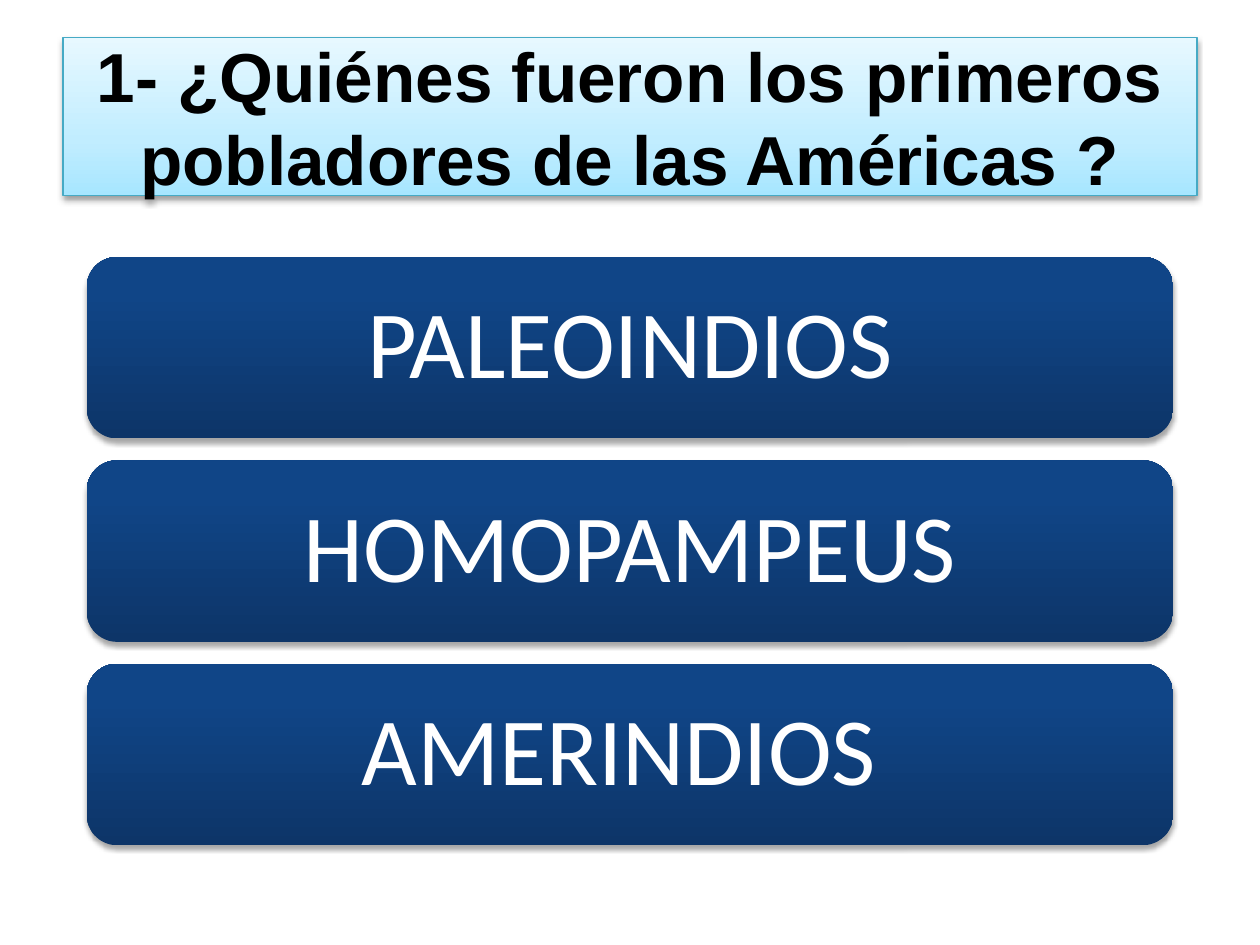
from lxml import etree
from pptx import Presentation
from pptx import util as u
from pptx.dml.color import RGBColor
from pptx.enum import shapes, text
from pptx.oxml import ns

COLORS = {
    "title_text": "000000",
    "title_border": "46AAC5",
    "answer_text": "FFFFFF",
    "shadow": "000000",
}
TITLE_GRADIENT = [(0, "A7E6FF"), (35, "C1EDFF"), (100, "E7F8FF")]
ANSWER_GRADIENT = [(0, "0D3568"), (80, "104587"), (100, "0E458A")]
ANSWERS = ["PALEOINDIOS", "HOMOPAMPEUS", "AMERINDIOS "]
ANSWER_TOP, ANSWER_PITCH = 5.18, 4.1


def child(parent, tag, **attributes):
    element = etree.SubElement(parent, ns.qn(tag))
    for name, value in attributes.items():
        element.set(name, str(value))
    return element


def fill_gradient(panel, stops):
    panel.fill.gradient()
    panel.fill.gradient_angle = 90
    stop_list = panel._element.spPr.find(".//" + ns.qn("a:gsLst"))
    for old_stop in list(stop_list):
        stop_list.remove(old_stop)
    for percent, color in stops:
        child(child(stop_list, "a:gs", pos=percent * 1000), "a:srgbClr", val=color)


def cast_shadow(panel, opacity, distance):
    panel.shadow.inherit = False
    effects = panel._element.spPr.find(ns.qn("a:effectLst"))
    shadow = child(effects, "a:outerShdw", blurRad=u.Pt(3.1), dist=u.Pt(distance),
                   dir=90 * 60000, rotWithShape=0)
    color = child(shadow, "a:srgbClr", val=COLORS["shadow"])
    child(color, "a:alpha", val=opacity * 1000)


def write_centered(panel, words, font, size, color, bold=False):
    frame = panel.text_frame
    frame.word_wrap = True
    frame.vertical_anchor = text.MSO_ANCHOR.MIDDLE
    paragraph = frame.paragraphs[0]
    paragraph.alignment = text.PP_ALIGN.CENTER
    run = paragraph.add_run()
    run.text = words
    run.font.name = font
    run.font.size = u.Pt(size)
    run.font.bold = bold
    run.font.color.rgb = RGBColor.from_string(color)
    return frame


def add_question(slide, words):
    banner = slide.shapes.add_shape(shapes.MSO_SHAPE.RECTANGLE, u.Cm(1.27), u.Cm(0.76),
                                    u.Cm(22.86), u.Cm(3.18))
    fill_gradient(banner, TITLE_GRADIENT)
    banner.line.color.rgb = RGBColor.from_string(COLORS["title_border"])
    banner.line.width = u.Pt(0.75)
    cast_shadow(banner, 38, 1.6)
    write_centered(banner, words, "Arial", 39.6, COLORS["title_text"], bold=True)


def add_answer(slide, words, top):
    bar = slide.shapes.add_shape(shapes.MSO_SHAPE.ROUNDED_RECTANGLE, u.Cm(1.75), u.Cm(top),
                                 u.Cm(21.9), u.Cm(3.66))
    fill_gradient(bar, ANSWER_GRADIENT)
    bar.line.fill.background()
    cast_shadow(bar, 35, 1.8)
    frame = write_centered(bar, words, "Calibri", 55, COLORS["answer_text"])
    frame.margin_left = frame.margin_right = u.Cm(0.58)
    frame.margin_top = frame.margin_bottom = u.Cm(0.58)
    frame.paragraphs[0].line_spacing = 0.9


def main():
    deck = Presentation()
    deck.slide_width, deck.slide_height = u.Cm(25.4), u.Cm(19.05)
    slide = deck.slides.add_slide(deck.slide_layouts[6])
    add_question(slide, "1- ¿Quiénes fueron los primeros pobladores de las Américas ?")
    for row, answer in enumerate(ANSWERS):
        add_answer(slide, answer, ANSWER_TOP + row * ANSWER_PITCH)
    deck.save("out.pptx")


if __name__ == "__main__":
    main()
